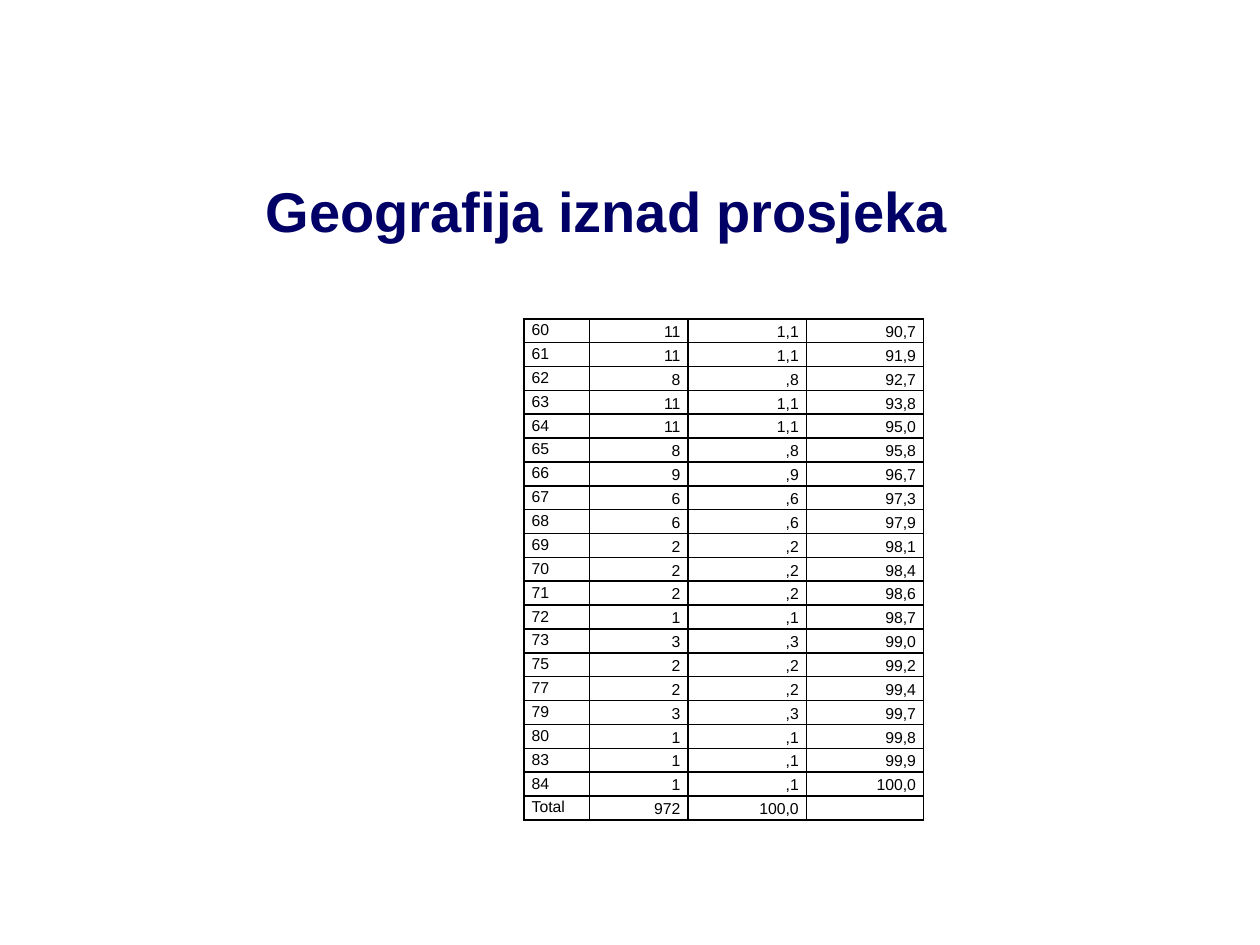
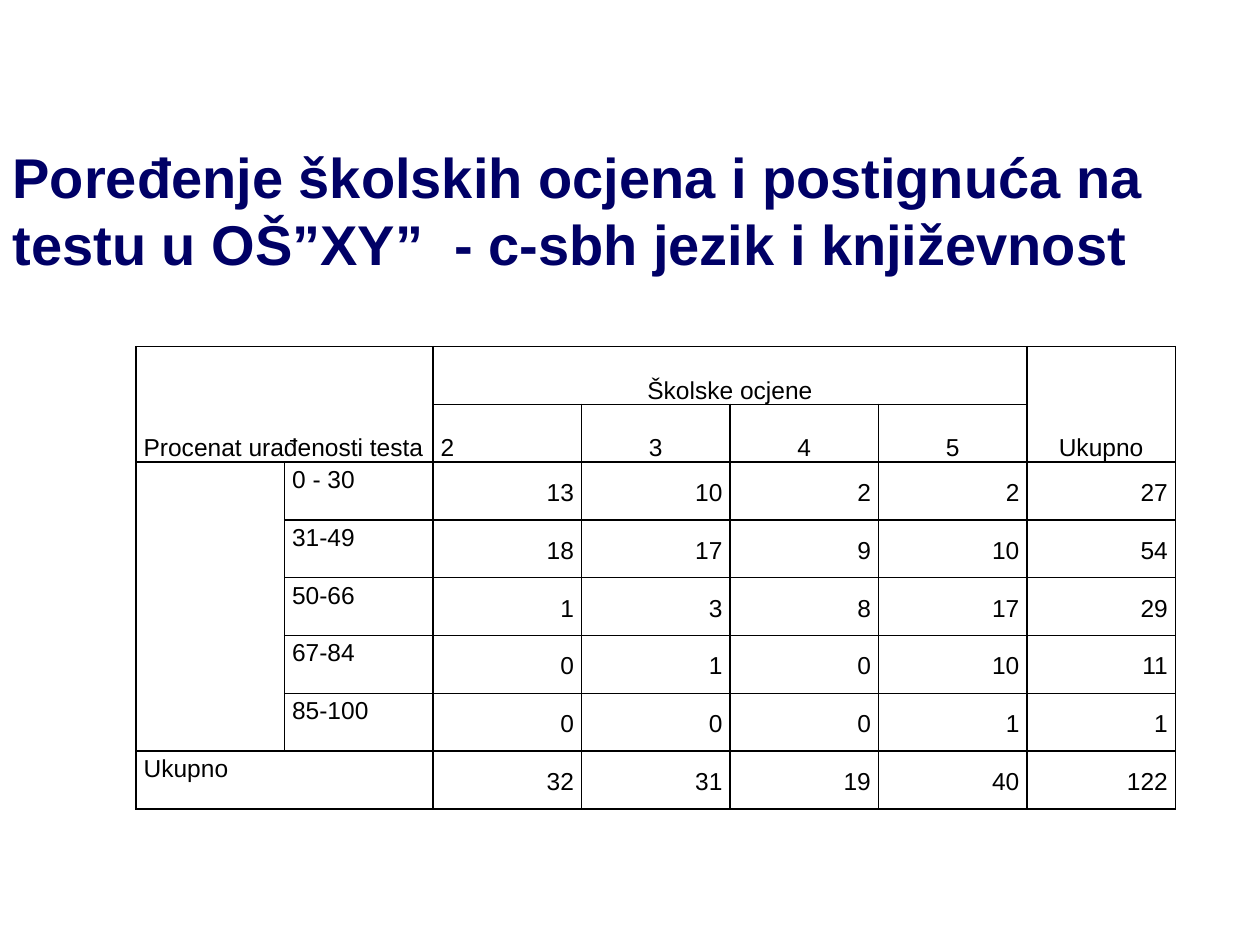
from lxml import etree
from pptx import Presentation
from pptx import util as u
from pptx.dml.color import RGBColor
from pptx.enum import text
from pptx.oxml.ns import qn

NAVY, BLACK, WHITE = "000066", "000000", "FFFFFF"
FONT = "Arial"
LEFT, CENTER, RIGHT = text.PP_ALIGN.LEFT, text.PP_ALIGN.CENTER, text.PP_ALIGN.RIGHT
TOP, MIDDLE, BOTTOM = text.MSO_ANCHOR.TOP, text.MSO_ANCHOR.MIDDLE, text.MSO_ANCHOR.BOTTOM


def write(frame, words, size, color, bold=False, align=LEFT, anchor=MIDDLE, spacing=1.0):
    frame.word_wrap = True
    frame.vertical_anchor = anchor
    para = frame.paragraphs[0]
    para.alignment = align
    para.line_spacing = spacing
    if not words:
        # An empty cell keeps the height of its neighbours
        etree.SubElement(para._p, qn("a:endParaRPr"), sz=str(size * 100))
        return
    span = para.add_run()
    span.text = words
    span.font.name = FONT
    span.font.size = u.Pt(size)
    span.font.bold = bold
    span.font.color.rgb = RGBColor.from_string(color)


def style_cell(cell):
    cell.margin_left = cell.margin_right = u.Inches(0.06)
    cell.margin_top = cell.margin_bottom = 0
    props = cell._tc.get_or_add_tcPr()
    for side in ("lnL", "lnR", "lnT", "lnB"):
        line = etree.SubElement(props, qn(f"a:{side}"), w=str(u.Pt(1)))
        fill = etree.SubElement(line, qn("a:solidFill"))
        etree.SubElement(fill, qn("a:srgbClr"), val=BLACK)
    cell.fill.solid()
    cell.fill.fore_color.rgb = RGBColor.from_string(WHITE)


# Geography scores: score, count, percent, cumulative percent
scores = [line.split() for line in """
60 11 1,1 90,7
61 11 1,1 91,9
62 8 ,8 92,7
63 11 1,1 93,8
64 11 1,1 95,0
65 8 ,8 95,8
66 9 ,9 96,7
67 6 ,6 97,3
68 6 ,6 97,9
69 2 ,2 98,1
70 2 ,2 98,4
71 2 ,2 98,6
72 1 ,1 98,7
73 3 ,3 99,0
75 2 ,2 99,2
77 2 ,2 99,4
79 3 ,3 99,7
80 1 ,1 99,8
83 1 ,1 99,9
84 1 ,1 100,0
Total 972 100,0
""".strip().splitlines()]
scores[-1].append("")

# Test results by school grade
grades = [
    ["Procenat urađenosti testa", "", "Školske ocjene", "", "", "", "Ukupno"],
    ["", "", "2", "3", "4", "5", ""],
    ["", "0 - 30", "13", "10", "2", "2", "27"],
    ["", "31-49", "18", "17", "9", "10", "54"],
    ["", "50-66", "1", "3", "8", "17", "29"],
    ["", "67-84", "0", "1", "0", "10", "11"],
    ["", "85-100", "0", "0", "0", "1", "1"],
    ["Ukupno", "", "32", "31", "19", "40", "122"],
]
# Merged cells: first row, first column, last row, last column
grade_merges = [(0, 0, 1, 1), (0, 2, 0, 5), (0, 6, 1, 6), (2, 0, 6, 0), (7, 0, 7, 1)]

pages = [
    dict(title="Geografija iznad prosjeka", title_left=2.01, title_width=7.49,
         rows=scores, left=4.16, top=2.53, height=3.98, widths=[0.52, 0.78, 0.94, 0.93],
         size=9, label_columns=1, header_rows=0, merges=[]),
    dict(title="Poređenje školskih ocjena i postignuća na testu u OŠ”XY”  - c-sbh jezik i književnost",
         title_left=0, title_width=9.5,
         rows=grades, left=1.08, top=2.75, height=3.67, widths=[8.25 / 7] * 7,
         size=14, label_columns=2, header_rows=2, merges=grade_merges),
]

deck = Presentation()
deck.slide_width, deck.slide_height = u.Inches(10), u.Inches(7.5)

for content in pages:
    page = deck.slides.add_slide(deck.slide_layouts[5])

    # Title
    title = page.shapes.title
    title.left, title.top = u.Inches(content["title_left"]), u.Inches(1.23)
    title.width, title.height = u.Inches(content["title_width"]), u.Inches(0.87)
    title.text_frame.auto_size = text.MSO_AUTO_SIZE.NONE
    write(title.text_frame, content["title"], 32, NAVY, bold=True)

    # Table grid
    rows, widths = content["rows"], content["widths"]
    table = page.shapes.add_table(
        len(rows), len(widths), u.Inches(content["left"]), u.Inches(content["top"]),
        u.Inches(sum(widths)), u.Inches(content["height"])).table
    table.first_row = table.horz_banding = False
    for column, width in zip(table.columns, widths):
        column.width = u.Inches(width)
    for row in table.rows:
        row.height = u.Inches(content["height"] / len(rows))

    # Cells: headers at the bottom, labels at the top, numbers to the right
    for r, values in enumerate(rows):
        for c, value in enumerate(values):
            cell = table.cell(r, c)
            style_cell(cell)
            is_label = c < content["label_columns"]
            if r < content["header_rows"]:
                anchor = BOTTOM
                align = LEFT if is_label or value == "2" else CENTER
            elif is_label:
                anchor, align = TOP, LEFT
            else:
                anchor, align = MIDDLE, RIGHT
            write(cell.text_frame, value, content["size"], BLACK, align=align, spacing=1.15)
            cell.vertical_anchor = anchor

    for top, left, bottom, right in content["merges"]:
        table.cell(top, left).merge(table.cell(bottom, right))

deck.save("out.pptx")
